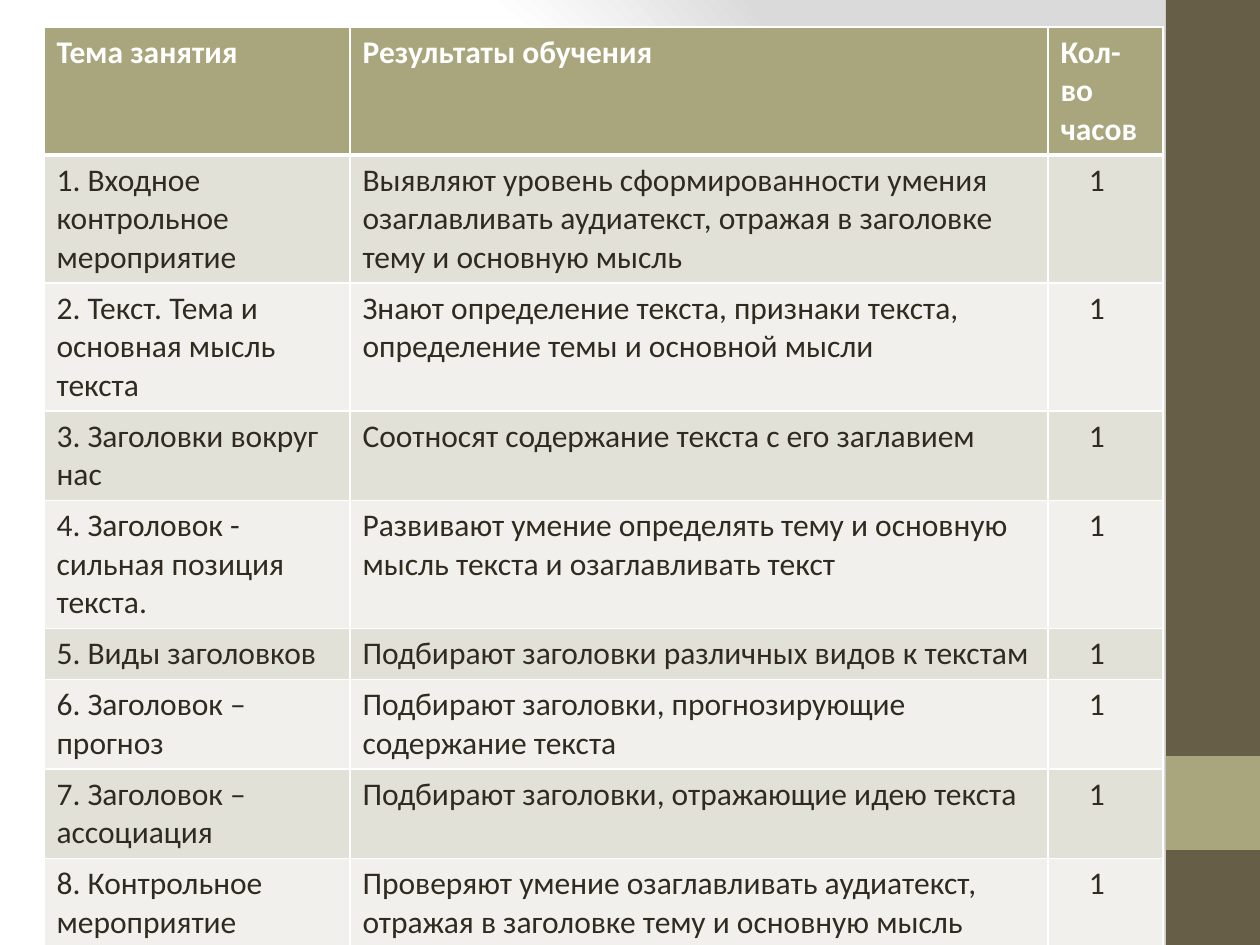
from dataclasses import dataclass

from lxml.etree import SubElement
from pptx import Presentation
from pptx.dml.color import RGBColor
from pptx.enum.shapes import MSO_SHAPE
from pptx.oxml import parse_xml
from pptx.oxml.ns import nsdecls, qn
from pptx.util import Emu, Pt

SLIDE_WIDTH, SLIDE_HEIGHT = 1260, 945
SIDEBAR_LEFT, SIDEBAR_WIDTH = 1166, 94
TABLE_LEFT, TABLE_TOP, TABLE_HEIGHT = 44, 27, 908
COLUMN_WIDTHS = (306, 698, 115)
ROW_HEIGHT = 51
HOURS_INDENT = 41

HEADER = ("Тема занятия", "Результаты обучения", "Кол-во часов")
LESSONS = (
    ("1. Входное контрольное мероприятие",
     "Выявляют уровень сформированности умения озаглавливать аудиатекст, "
     "отражая в заголовке тему и основную мысль", "1"),
    ("2. Текст. Тема и основная мысль текста",
     "Знают определение текста, признаки текста, определение темы и основной мысли", "1"),
    ("3. Заголовки вокруг нас", "Соотносят содержание текста с его заглавием", "1"),
    ("4. Заголовок - сильная позиция текста.",
     "Развивают умение определять тему и основную мысль текста и озаглавливать текст", "1"),
    ("5. Виды заголовков", "Подбирают заголовки различных видов к текстам", "1"),
    ("6. Заголовок – прогноз", "Подбирают заголовки, прогнозирующие содержание текста", "1"),
    ("7. Заголовок – ассоциация", "Подбирают заголовки, отражающие идею текста", "1"),
    ("8. Контрольное мероприятие",
     "Проверяют умение озаглавливать аудиатекст, отражая в заголовке тему и основную мысль", "1"),
)


@dataclass(frozen=True)
class Theme:
    """Colours, font and sizes of the slide."""
    font: str = "Calibri"
    text_size: int = 18
    text: str = "2F2B20"
    light: str = "FFFFFF"
    shade: str = "DADADA"
    sidebar: str = "675E47"
    accent: str = "A9A57C"
    bands: tuple = ("E2E1D7", "F1F0EC")
    border: int = 1
    header_border: int = 3


def px(length):
    """Turn pixels into EMU."""
    return Emu(round(length * 914400 / 126))


def write(text_frame, text, *, font, size, color, bold=False):
    """Put one formatted run of text into a text frame."""
    run = text_frame.paragraphs[0].add_run()
    run.text = text
    run.font.name = font
    run.font.size = Pt(size)
    run.font.bold = bold
    run.font.color.rgb = RGBColor.from_string(color)


class SlideBuilder:
    """Draws elements on the current slide in one theme."""

    def __init__(self, slide, theme):
        """Keep the slide and its theme."""
        self.slide = slide
        self.theme = theme

    def background(self):
        """Fill the background with a radial gradient."""
        self.slide.background.fill.solid()
        properties = self.slide.element.find(".//" + qn("p:bgPr"))
        stops = ((0, self.theme.light), (75, self.theme.light), (100, self.theme.shade))
        stop_xml = "".join(
            f'<a:gs pos="{position * 1000}"><a:srgbClr val="{color}"/></a:gs>'
            for position, color in stops)
        gradient = parse_xml(
            f'<a:gradFill {nsdecls("a")} rotWithShape="1"><a:gsLst>{stop_xml}</a:gsLst>'
            '<a:path path="circle"><a:fillToRect l="20000" t="50000" r="100000" b="50000"/>'
            '</a:path></a:gradFill>')
        properties.replace(properties.find(qn("a:solidFill")), gradient)

    def rectangle(self, left, top, width, height, color):
        """Add a plain filled rectangle."""
        shape = self.slide.shapes.add_shape(
            MSO_SHAPE.RECTANGLE, px(left), px(top), px(width), px(height))
        shape.shadow.inherit = False
        shape.fill.solid()
        shape.fill.fore_color.rgb = RGBColor.from_string(color)
        shape.line.fill.background()

    def borders(self, cell, top, bottom):
        """Draw the four borders of a cell, ahead of its fill."""
        properties = cell._tc.get_or_add_tcPr()
        widths = {"a:lnL": self.theme.border, "a:lnR": self.theme.border,
                  "a:lnT": top, "a:lnB": bottom}
        for position, (tag, width) in enumerate(widths.items()):
            line = SubElement(properties, qn(tag), w=str(Pt(width)))
            fill = SubElement(line, qn("a:solidFill"))
            SubElement(fill, qn("a:srgbClr"), val=self.theme.light)
            properties.insert(position, line)

    def cell(self, cell, text, row):
        """Fill, frame and write one table cell."""
        theme = self.theme
        is_header = row == 0
        cell.fill.solid()
        cell.fill.fore_color.rgb = RGBColor.from_string(
            theme.accent if is_header else theme.bands[(row - 1) % 2])
        self.borders(cell,
                     top=theme.header_border if row == 1 else theme.border,
                     bottom=theme.header_border if is_header else theme.border)
        write(cell.text_frame, text, font=theme.font, size=theme.text_size,
              color=theme.light if is_header else theme.text, bold=is_header)

    def table(self, left, top, height, column_widths, rows):
        """Add a table with a header row and banded body rows."""
        frame = self.slide.shapes.add_table(
            len(rows), len(column_widths), px(left), px(top),
            px(sum(column_widths)), px(height))
        table = frame.table
        for column, width in zip(table.columns, column_widths):
            column.width = px(width)
        for row, texts in enumerate(rows):
            table.rows[row].height = px(ROW_HEIGHT)
            for column, text in enumerate(texts):
                self.cell(table.cell(row, column), text, row)
        frame.height = px(height)
        return table


def main():
    """Build and save the lesson plan slide."""
    presentation = Presentation()
    presentation.slide_width = px(SLIDE_WIDTH)
    presentation.slide_height = px(SLIDE_HEIGHT)
    slide = presentation.slides.add_slide(presentation.slide_layouts[6])
    theme = Theme()
    builder = SlideBuilder(slide, theme)

    builder.background()
    builder.rectangle(SIDEBAR_LEFT, 0, SIDEBAR_WIDTH, SLIDE_HEIGHT, theme.sidebar)
    builder.rectangle(SIDEBAR_LEFT, 756, SIDEBAR_WIDTH, SIDEBAR_WIDTH, theme.accent)
    table = builder.table(TABLE_LEFT, TABLE_TOP, TABLE_HEIGHT, COLUMN_WIDTHS,
                          (HEADER, *LESSONS))
    for row in range(1, len(LESSONS) + 1):
        table.cell(row, 2).margin_left = px(HOURS_INDENT)

    presentation.save("out.pptx")


if __name__ == "__main__":
    main()
